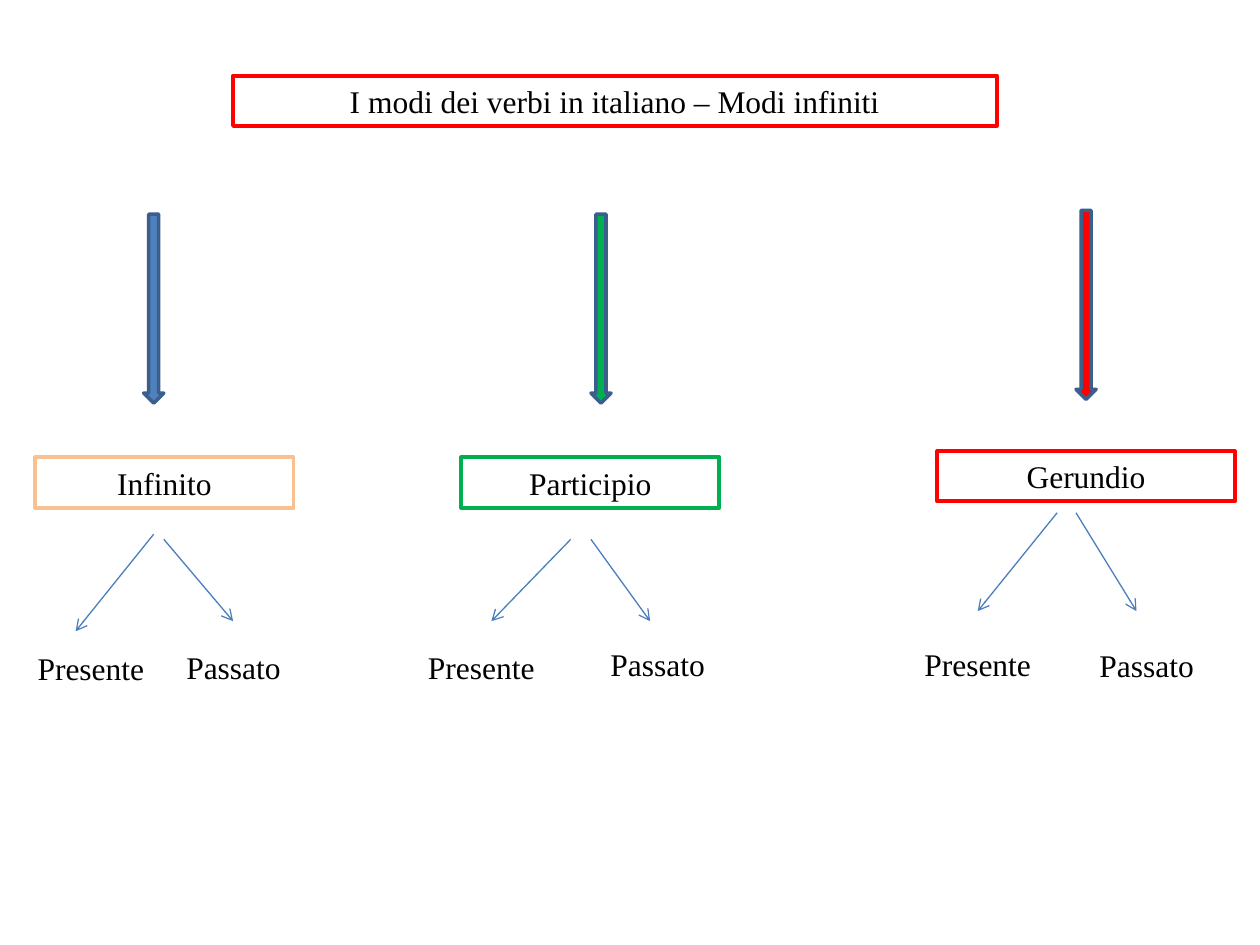
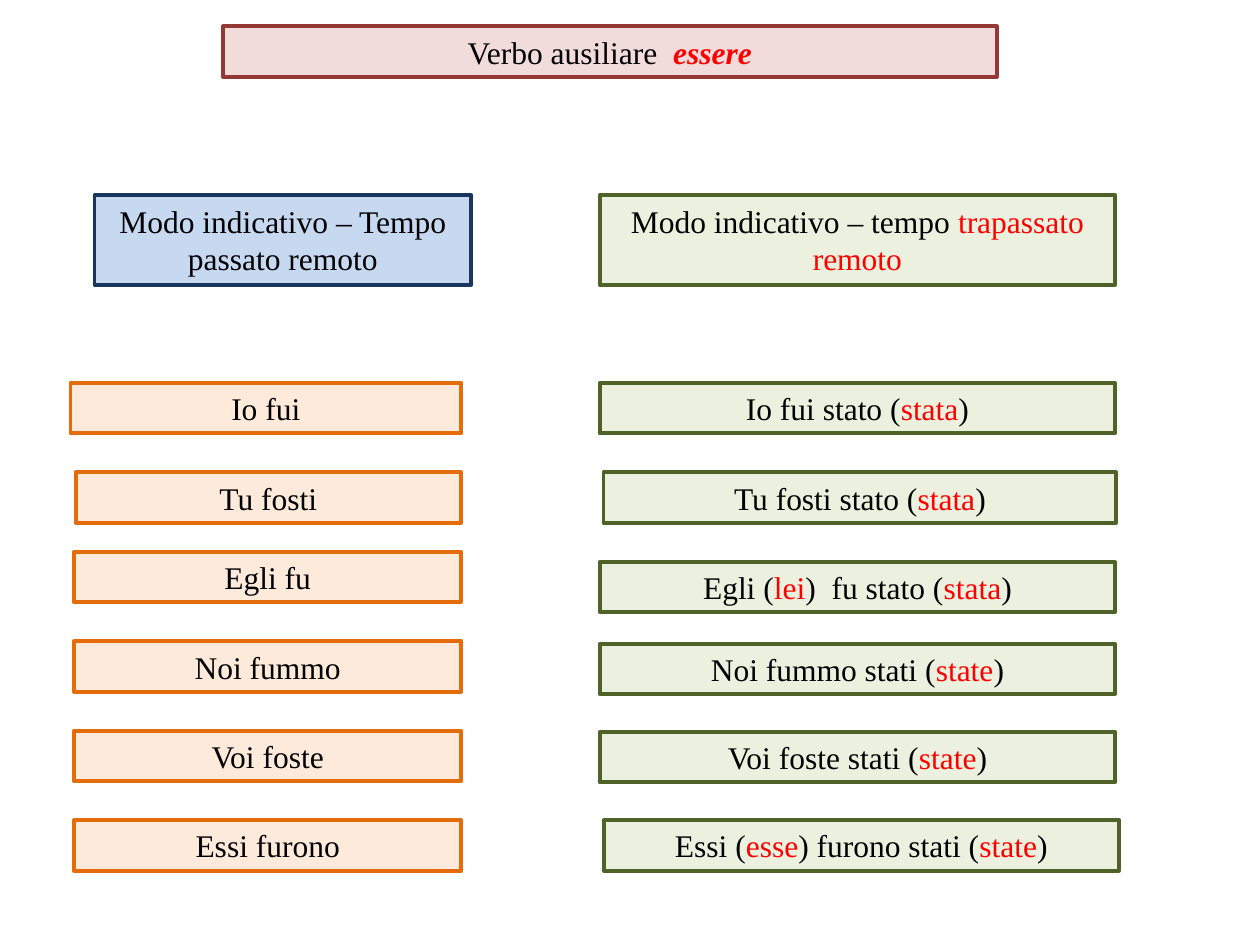
"""Build two slides on Italian verb moods and the auxiliary verb essere."""
from dataclasses import dataclass
from typing import NamedTuple, Optional

from lxml import etree
from pptx import Presentation
from pptx.dml.color import RGBColor
from pptx.enum import shapes, text
from pptx.oxml import ns
from pptx.util import Inches, Pt


@dataclass(frozen=True)
class Theme:
    """Colours, typeface and sizes shared by the slides."""
    font: str = "Times New Roman"
    text_size: float = 18
    frame_width: float = 2.25
    arrow_width: float = 2
    branch_width: float = 0.75
    ink: str = "000000"
    red: str = "FF0000"
    green: str = "00B050"
    blue: str = "4F81BD"
    arrow_edge: str = "3A5F8C"
    branch: str = "4B7EBC"
    peach: str = "FAC090"


class Paint(NamedTuple):
    """Frame colour and optional fill of a box."""
    line: str
    fill: Optional[str] = None


class Area(NamedTuple):
    """Left, top, width and height in inches."""
    left: float
    top: float
    width: float
    height: float = 0.4


class Branch(NamedTuple):
    """Arrow from a mood down to one tense, with the tense label's area."""
    start: tuple[float, float]
    end: tuple[float, float]
    label: Area
    align: text.PP_ALIGN = text.PP_ALIGN.CENTER


class Mood(NamedTuple):
    """A mood with its block arrow, box and two tenses."""
    name: str
    box: Area
    frame: str
    arrow_left: float
    arrow_top: float
    arrow_fill: str
    present: Branch
    past: Branch


class Person(NamedTuple):
    """One verb person in both tenses, with the box positions."""
    simple: str
    simple_area: Area
    compound: tuple[str, ...]
    compound_area: Area


THEME = Theme()
TITLE = Paint("953735", "F2DCDB")
SIMPLE_HEAD = Paint("17375E", "C6D9F1")
SIMPLE = Paint("E46C0A", "FDEADA")
COMPOUND = Paint("4F6228", "EBF1DE")
LEFT = text.PP_ALIGN.LEFT

MOODS = (
    Mood("Infinito", Area(0.28, 3.63, 2.05), THEME.peach, 1.14, 1.7, THEME.blue,
         Branch((1.22, 4.24), (0.6, 5.01), Area(0.2, 5.1, 1.1), LEFT),
         Branch((1.3, 4.28), (1.85, 4.93), Area(1.38, 5.09, 1.41), LEFT)),
    Mood("Participio", Area(3.66, 3.63, 2.05), THEME.green, 4.69, 1.7, THEME.green,
         Branch((4.53, 4.28), (3.9, 4.93), Area(3.15, 5.09, 1.34)),
         Branch((4.69, 4.28), (5.16, 4.93), Area(4.71, 5.07, 1.02))),
    Mood("Gerundio", Area(7.44, 3.58, 2.36), THEME.red, 8.54, 1.67, THEME.red,
         Branch((8.39, 4.07), (7.76, 4.85), Area(7.13, 5.07, 1.26)),
         Branch((8.54, 4.07), (9.02, 4.85), Area(8.59, 5.08, 1.02))),
)

PERSONS = (
    Person("Io fui", Area(0.56, 3.04, 3.1),
           ("Io fui stato (", "stata", ")"), Area(4.76, 3.04, 4.09)),
    Person("Tu fosti", Area(0.6, 3.75, 3.06),
           ("Tu fosti stato (", "stata", ")"), Area(4.79, 3.75, 4.07)),
    Person("Egli fu", Area(0.59, 4.38, 3.07),
           ("Egli (", "lei", ")  fu stato (", "stata", ")"), Area(4.76, 4.46, 4.09)),
    Person("Noi fummo", Area(0.59, 5.09, 3.07),
           ("Noi fummo stati (", "state", ")"), Area(4.76, 5.11, 4.09)),
    Person("Voi foste", Area(0.59, 5.8, 3.07),
           ("Voi foste stati (", "state", ")"), Area(4.76, 5.81, 4.09)),
    Person("Essi furono", Area(0.59, 6.51, 3.07),
           ("Essi (", "esse", ") furono stati (", "state", ")"), Area(4.79, 6.51, 4.09)),
)


def inches(area: Area) -> list[int]:
    """Convert an area to lengths."""
    return [Inches(length) for length in area]


def write(shape, parts: tuple[str, ...], align=text.PP_ALIGN.CENTER,
          strong: bool = False) -> None:
    """Write runs that alternate between ink and red emphasis."""
    frame = shape.text_frame
    frame.word_wrap = True
    frame.vertical_anchor = text.MSO_ANCHOR.TOP
    frame.auto_size = text.MSO_AUTO_SIZE.SHAPE_TO_FIT_TEXT
    paragraph = frame.paragraphs[0]
    paragraph.alignment = align
    for index, part in enumerate(parts):
        emphasised = index % 2 == 1
        run = paragraph.add_run()
        run.text = part
        run.font.name = THEME.font
        run.font.size = Pt(THEME.text_size)
        run.font.color.rgb = RGBColor.from_string(THEME.red if emphasised else THEME.ink)
        if strong and emphasised:
            run.font.bold = run.font.italic = True


def add_figure(slide, kind: shapes.MSO_SHAPE, area: Area, paint: Paint, width: float):
    """Draw a preset shape without a shadow."""
    figure = slide.shapes.add_shape(kind, *inches(area))
    figure.shadow.inherit = False
    if paint.fill:
        figure.fill.solid()
        figure.fill.fore_color.rgb = RGBColor.from_string(paint.fill)
    else:
        figure.fill.background()
    figure.line.color.rgb = RGBColor.from_string(paint.line)
    figure.line.width = Pt(width)
    return figure


def add_box(slide, area: Area, paint: Paint, *parts: str, strong: bool = False) -> None:
    """Draw a framed box with centred text."""
    box = add_figure(slide, shapes.MSO_SHAPE.RECTANGLE, area, paint, THEME.frame_width)
    write(box, parts, strong=strong)


def add_branch(slide, branch: Branch, tense: str) -> None:
    """Draw a thin arrow and the tense it leads to."""
    ends = [Inches(length) for length in branch.start + branch.end]
    arrow = slide.shapes.add_connector(shapes.MSO_CONNECTOR.STRAIGHT, *ends)
    arrow.line.color.rgb = RGBColor.from_string(THEME.branch)
    arrow.line.width = Pt(THEME.branch_width)
    etree.SubElement(arrow.line._get_or_add_ln(), ns.qn("a:tailEnd"), type="arrow")
    etree.SubElement(arrow._element.spPr, ns.qn("a:effectLst"))
    label = slide.shapes.add_textbox(*inches(branch.label))
    write(label, (tense,), branch.align)


def build_moods(slide) -> None:
    """Draw the tree of the infinite moods."""
    add_box(slide, Area(1.85, 0.6, 6.06), Paint(THEME.red),
            "I modi dei verbi in italiano – Modi infiniti")
    for mood in MOODS:
        add_figure(slide, shapes.MSO_SHAPE.DOWN_ARROW,
                   Area(mood.arrow_left, mood.arrow_top, 0.16, 1.5),
                   Paint(THEME.arrow_edge, mood.arrow_fill), THEME.arrow_width)
        add_box(slide, mood.box, Paint(mood.frame), mood.name)
        add_branch(slide, mood.present, "Presente")
        add_branch(slide, mood.past, "Passato")


def build_essere(slide) -> None:
    """Draw the two past tenses of essere side by side."""
    add_box(slide, Area(1.77, 0.21, 6.14), TITLE,
            "Verbo ausiliare ", " essere", strong=True)
    add_box(slide, Area(0.75, 1.55, 2.99, 0.71), SIMPLE_HEAD,
            "Modo indicativo – Tempo passato remoto")
    add_box(slide, Area(4.76, 1.55, 4.09, 0.71), COMPOUND,
            "Modo indicativo – tempo ", "trapassato remoto")
    for person in PERSONS:
        add_box(slide, person.simple_area, SIMPLE, person.simple)
        add_box(slide, person.compound_area, COMPOUND, *person.compound)


def main() -> None:
    """Build and save the presentation."""
    deck = Presentation()
    deck.slide_width, deck.slide_height = Inches(10), Inches(7.5)
    for build in (build_moods, build_essere):
        build(deck.slides.add_slide(deck.slide_layouts[6]))
    deck.save("out.pptx")


if __name__ == "__main__":
    main()
